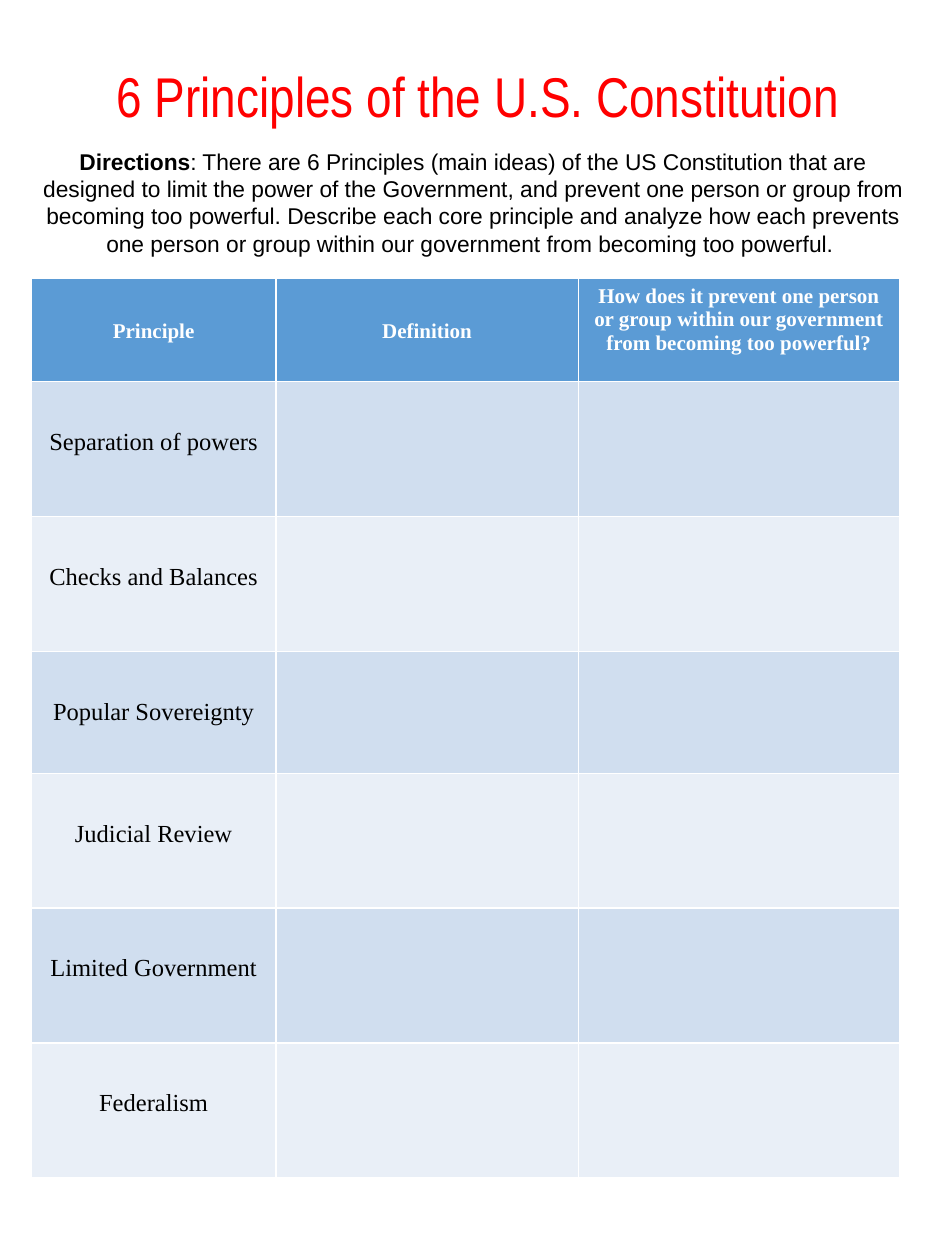
from pptx import Presentation
from pptx.dml.color import RGBColor
from pptx.enum.text import MSO_ANCHOR, MSO_AUTO_SIZE, PP_ALIGN
from pptx.util import Inches, Pt

COLORS = {
    "title": "FF0000",
    "text": "000000",
    "header": "5B9BD5",
    "header_text": "FFFFFF",
    "odd_row": "D0DEEF",
    "even_row": "E9EFF7",
}
TITLE = "6 Principles of the U.S. Constitution"
DIRECTIONS = [
    ("Directions", True),
    (": There are 6 Principles (main ideas) of the US Constitution that are "
     "designed to limit the power of the Government, and prevent one person or "
     "group from becoming too powerful. Describe each core principle and "
     "analyze how each prevents one person or group within our government "
     "from becoming too powerful. ", False),
]
HEADERS = [
    "Principle",
    "Definition",
    "How does it prevent one person or group within our government "
    "from becoming too powerful?",
]
PRINCIPLES = [
    ("Separation of powers", 1.07),
    ("Checks and Balances", 1.07),
    ("Popular Sovereignty", 0.97),
    ("Judicial Review", 1.07),
    ("Limited Government", 1.07),
    ("Federalism", 1.07),
]
COLUMN_WIDTHS = [1.94, 2.4, 2.55]
HEADER_HEIGHT = 0.82
LABEL_SPACING = 2.5


def color(name):
    return RGBColor.from_string(COLORS[name])


def format_paragraph(para, font, size, color_name, bold=None, spacing=None):
    para.alignment = PP_ALIGN.CENTER
    para.line_spacing = spacing
    para.font.name = font
    para.font.size = Pt(size)
    para.font.color.rgb = color(color_name)
    para.font.bold = bold


def add_title(page):
    title = page.shapes.title
    title.left, title.top = Inches(0.25), Inches(0.44)
    title.width, title.height = Inches(7.09), Inches(0.57)
    frame = title.text_frame
    frame.text = TITLE
    frame.auto_size = MSO_AUTO_SIZE.NONE
    frame.vertical_anchor = MSO_ANCHOR.TOP
    format_paragraph(frame.paragraphs[0], "Arial Narrow", 32, "title")


def add_directions(page):
    box = page.shapes.add_textbox(Inches(0.17), Inches(1.12), Inches(7.16), Inches(0.97))
    frame = box.text_frame
    frame.word_wrap = True
    frame.vertical_anchor = MSO_ANCHOR.MIDDLE
    frame.margin_top = frame.margin_bottom = Inches(0.1)
    para = frame.paragraphs[0]
    format_paragraph(para, "Arial", 13, "text")
    for text, bold in DIRECTIONS:
        span = para.add_run()
        span.text = text
        span.font.bold = bold


def add_principles_table(page):
    rows = [HEADERS] + [[name, "", ""] for name, _ in PRINCIPLES]
    heights = [HEADER_HEIGHT] + [height for _, height in PRINCIPLES]
    table = page.shapes.add_table(
        len(rows), len(HEADERS), Inches(0.25), Inches(2.21),
        Inches(sum(COLUMN_WIDTHS)), Inches(sum(heights))).table
    for column, width in zip(table.columns, COLUMN_WIDTHS):
        column.width = Inches(width)
    for r, (texts, height) in enumerate(zip(rows, heights)):
        table.rows[r].height = Inches(height)
        is_header = r == 0
        fill = "header" if is_header else "odd_row" if r % 2 else "even_row"
        for c, text in enumerate(texts):
            cell = table.cell(r, c)
            cell.fill.solid()
            cell.fill.fore_color.rgb = color(fill)
            if not text:
                continue
            cell.text = text
            format_paragraph(
                cell.text_frame.paragraphs[0], "Times New Roman",
                12 if is_header else 14,
                "header_text" if is_header else "text",
                bold=is_header,
                spacing=LABEL_SPACING if c < 2 else None)


def main():
    deck = Presentation()
    deck.slide_width, deck.slide_height = Inches(7.5), Inches(10)
    page = deck.slides.add_slide(deck.slide_layouts.get_by_name("Title Only"))
    add_title(page)
    add_directions(page)
    add_principles_table(page)
    deck.save("out.pptx")


if __name__ == "__main__":
    main()
